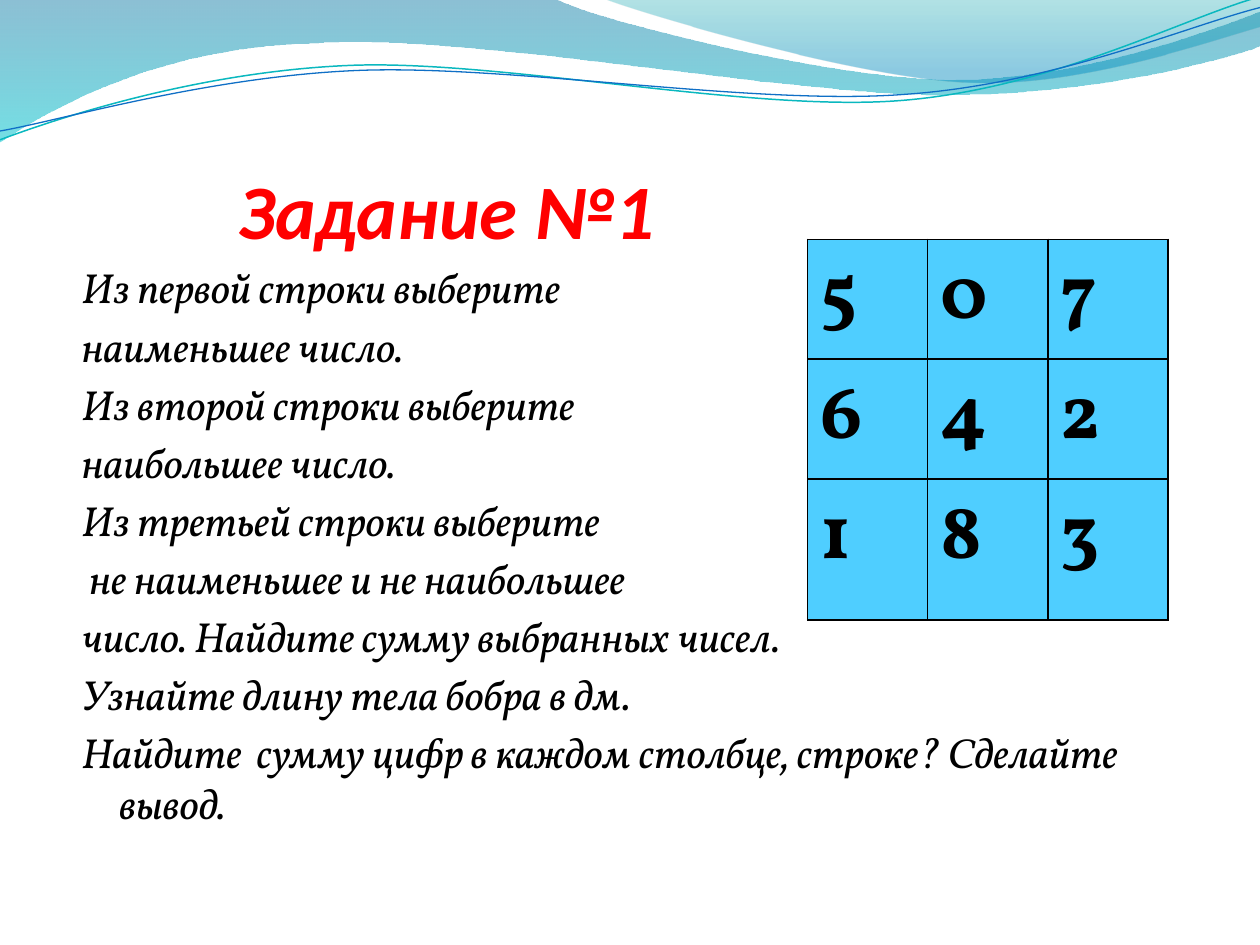
from lxml.etree import SubElement
from pptx import Presentation
from pptx.dml.color import RGBColor
from pptx.enum.text import MSO_ANCHOR
from pptx.oxml.ns import qn
from pptx.util import Inches, Pt

BLACK = RGBColor(0, 0, 0)
RED = RGBColor(0xFF, 0, 0)
SKY = RGBColor(0x4F, 0xCE, 0xFF)
DEEP_BLUE = RGBColor(0, 0x74, 0xA1)
AQUA = RGBColor(0, 0xC6, 0xCF)
TEAL = RGBColor(0, 0xA1, 0xA9)
AZURE = RGBColor(0, 0x8B, 0xBF)
LINE_TEAL = RGBColor(0x0A, 0xB8, 0xBF)
LINE_BLUE = RGBColor(0x0F, 0x6F, 0xC6)

COLUMNS, ROWS = 10, 7.5
UNIT = Inches(1)  # one column or row of the page grid

# Each wave is a start point, then steps: two numbers draw a line, six a curve.
BROAD_WAVE = [(0, 0), (4.4, -0.01), (4.76, 0.17, 6.64, 0.63, 7.58, 0.63),
              (8.53, 0.63, 9.58, 0.26, 10, 0.09), (10.01, 0.36),
              (9.83, 0.44, 8.7, 0.76, 7.46, 0.75),
              (6.22, 0.75, 3.82, 0.28, 2.57, 0.34),
              (1.29, 0.36, 0.46, 0.83, -0.01, 1.13), (0, 0)]
RIGHT_WAVE = [(4.79, -0.01), (5.09, 0.11, 6.82, 0.62, 7.69, 0.65),
              (8.56, 0.69, 9.61, 0.32, 10, 0.21), (10, 0), (4.79, -0.01)]
TEAL_STRAND = [(0, 1.11), (0.48, 0.93, 1.58, 0.57, 2.77, 0.52),
               (3.95, 0.47, 5.93, 0.89, 7.13, 0.8),
               (8.33, 0.71, 9.38, 0.15, 9.98, -0.02)]
BLUE_STRAND = [(0, 1.04), (0.47, 0.96, 1.64, 0.61, 2.83, 0.56),
               (4.03, 0.51, 5.97, 0.84, 7.17, 0.75),
               (8.36, 0.67, 9.41, 0.21, 10, 0.06)]

TASK = ["Из первой строки выберите", "наименьшее число.",
        "Из второй строки выберите", "наибольшее число.",
        "Из третьей строки выберите", " не наименьшее и не наибольшее",
        "число. Найдите сумму выбранных чисел.",
        "Узнайте длину тела бобра в дм.",
        "Найдите  сумму цифр в каждом столбце, строке? Сделайте вывод."]
DIGITS = ["507", "642", "183"]


def grid(*lengths):
    return [round(length * UNIT) for length in lengths]


def bend(shape, steps):
    """Join the three straight segments of each six-number step into a curve."""
    segments = iter(list(shape.element.iter(qn("a:lnTo"))))
    for step in steps[1:]:
        first = next(segments)
        if len(step) == 2:
            continue
        curve = first.makeelement(qn("a:cubicBezTo"), {})
        first.addprevious(curve)
        for segment in (first, next(segments), next(segments)):
            curve.append(segment[0])
            segment.getparent().remove(segment)


def add_outline(page, box, steps, closed):
    points = [grid(box[0] + step[i], box[1] + step[i + 1])
              for step in steps for i in range(0, len(step), 2)]
    builder = page.shapes.build_freeform(*points[0])
    builder.add_line_segments(points[1:], close=closed)
    shape = builder.convert_to_shape()
    bend(shape, steps)
    shape.shadow.inherit = False
    return shape


def add_wave(page, box, steps, stops):
    """Draw a filled wave; each stop is position, colour, opacity in percent."""
    shape = add_outline(page, box, steps, True)
    shape.line.fill.background()
    shape.fill.gradient()
    shape.fill.gradient_angle = 270
    for stop, (position, colour, _) in zip(shape.fill.gradient_stops, stops):
        stop.position = position
        stop.color.rgb = colour
    colours = shape.element.spPr.iter(qn("a:srgbClr"))
    for colour, (_, _, opacity) in zip(colours, stops):
        SubElement(colour, qn("a:alpha"), val=str(opacity * 1000))


def add_strand(page, box, steps, colour, width):
    shape = add_outline(page, box, steps, False)
    shape.fill.background()
    shape.line.color.rgb = colour
    shape.line.width = Pt(width)


def add_waves(page, box):
    add_wave(page, box, BROAD_WAVE, [(0, DEEP_BLUE, 45), (1, AQUA, 55)])
    add_wave(page, box, RIGHT_WAVE, [(0, TEAL, 30), (0.8, AZURE, 45)])
    add_strand(page, box, TEAL_STRAND, LINE_TEAL, 0.85)
    add_strand(page, box, BLUE_STRAND, LINE_BLUE, 0.75)


def write(frame, lines, font="Vollkorn", size=24, colour=BLACK, bold=False,
          italic=False, before=0, hanging=0):
    frame.word_wrap = True
    for index, line in enumerate(lines):
        para = frame.add_paragraph() if index else frame.paragraphs[0]
        para.space_before = Pt(before)
        if hanging:
            indent, = grid(hanging)
            props = para._p.get_or_add_pPr()
            props.set("marL", str(indent))
            props.set("indent", str(-indent))
        span = para.add_run()
        span.text = line
        span.font.name = font
        span.font.size = Pt(size)
        span.font.color.rgb = colour
        span.font.bold = bold
        span.font.italic = italic


def add_title(page, box):
    frame = page.shapes.add_textbox(*grid(*box)).text_frame
    frame.vertical_anchor = MSO_ANCHOR.BOTTOM
    frame.margin_left, frame.margin_right, frame.margin_bottom = grid(1.39, 0, 0)
    write(frame, ["Задание №1"], font="Calibri", size=44, colour=RED,
          bold=True, italic=True)


def add_task(page, box):
    frame = page.shapes.add_textbox(*grid(*box)).text_frame
    write(frame, TASK, italic=True, before=4.4, hanging=0.3)


def add_borders(cell):
    props = cell._tc.get_or_add_tcPr()
    for index, side in enumerate(("lnL", "lnR", "lnT", "lnB")):
        line = props.makeelement(qn(f"a:{side}"), {"w": str(Pt(1))})
        fill = SubElement(line, qn("a:solidFill"))
        SubElement(fill, qn("a:srgbClr"), val=str(BLACK))
        props.insert(index, line)


def add_digit_table(page, box, heights):
    count = len(DIGITS)
    table = page.shapes.add_table(count, count, *grid(*box)).table
    table.first_row = table.horz_banding = False
    for column in table.columns:
        column.width, = grid(box[2] / count)
    for row, height, digits in zip(table.rows, heights, DIGITS):
        row.height, = grid(height)
        for cell, digit in zip(row.cells, digits):
            cell.fill.solid()
            cell.fill.fore_color.rgb = SKY
            write(cell.text_frame, [digit], size=44, bold=True)
            add_borders(cell)


def main():
    deck = Presentation()
    deck.slide_width, deck.slide_height = grid(COLUMNS, ROWS)
    page = deck.slides.add_slide(deck.slide_layouts[6])
    add_waves(page, (0, 0, COLUMNS, 1.14))
    add_title(page, (0.5, 0.77, 9, 1.25))
    add_task(page, (0.55, 2.03, 9, 4.8))
    add_digit_table(page, (6.41, 1.9, 2.86, 3.02), (0.95, 0.95, 1.12))
    deck.save("out.pptx")


if __name__ == "__main__":
    main()
